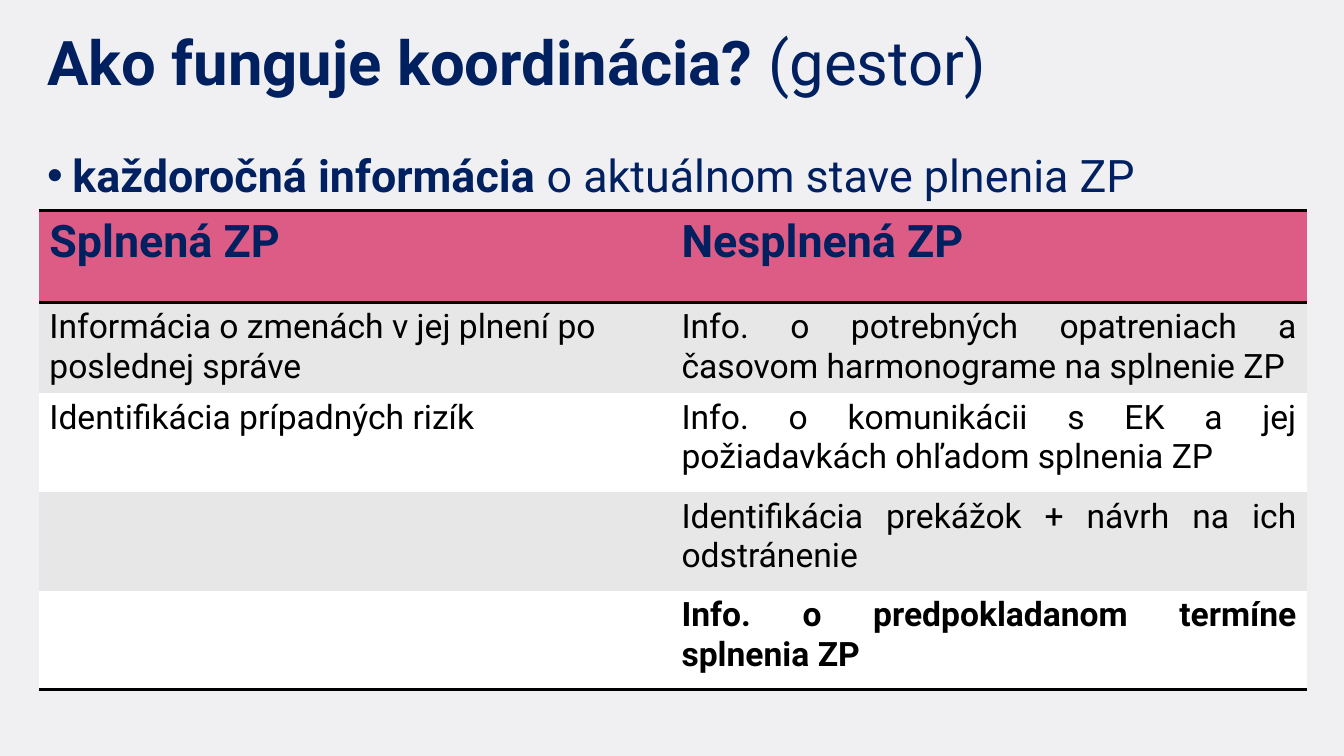
import pptx
import pptx.dml.color
import pptx.enum.text
import pptx.oxml
import pptx.oxml.ns
import pptx.util

WIDE, HIGH = 13.33, 7.5
FONT = "Roboto"
HUES = {"back": "F0F0F3", "navy": "002060", "rose": "DD5C85", "gray": "E7E7E7",
        "white": "FFFFFF", "black": "000000"}
ALIGN = pptx.enum.text.PP_ALIGN
ANCHOR = pptx.enum.text.MSO_ANCHOR
COLS = [6.27, 6.3]
ROWS = [0.91, 0.87, 0.98, 0.98, 0.98]
CELLS = [
    ("Splnená ZP", "Nesplnená ZP"),
    ("Informácia o zmenách v jej plnení po poslednej správe",
     "Info. o potrebných opatreniach a časovom harmonograme na splnenie ZP"),
    ("Identifikácia prípadných rizík",
     "Info. o komunikácii s EK a jej požiadavkách ohľadom splnenia ZP"),
    ("", "Identifikácia prekážok + návrh na ich odstránenie"),
    ("", "Info. o predpokladanom termíne splnenia ZP"),
]


def tint(hue):
    """Return the named colour."""
    return pptx.dml.color.RGBColor.from_string(HUES[hue])


def write(para, text, size, hue, bold=False):
    """Add one run to a paragraph."""
    run = para.add_run()
    run.text = text
    form = {"name": FONT, "size": pptx.util.Pt(size), "bold": bold}
    for key, value in form.items():
        setattr(run.font, key, value)
    run.font.color.rgb = tint(hue)


def label(slide, box, runs, size, hue, anchor=ANCHOR.TOP, **form):
    """Add a text box of (text, bold) runs and return its paragraph."""
    frame = slide.shapes.add_textbox(*map(pptx.util.Inches, box)).text_frame
    frame.word_wrap = True
    frame.vertical_anchor = anchor
    para = frame.paragraphs[0]
    for key, value in form.items():
        setattr(para, key, value)
    for text, bold in runs:
        write(para, text, size, hue, bold)
    return para


def head(slide, box):
    """Place the title."""
    runs = [("Ako funguje koordinácia? ", True), ("(gestor)", False)]
    label(slide, box, runs, 44, "navy", ANCHOR.BOTTOM, line_spacing=0.9)


def point(slide, box):
    """Place the bulleted lead line."""
    runs = [("každoročná informácia ", True), ("o aktuálnom stave plnenia ZP", False)]
    para = label(slide, box, runs, 32, "navy", alignment=ALIGN.JUSTIFY,
                 line_spacing=1.2, space_before=pptx.util.Pt(10))
    props = para._p.get_or_add_pPr()
    dent = pptx.util.Inches(0.25)
    props.set("marL", str(dent))
    props.set("indent", str(-dent))
    space = pptx.oxml.ns.nsdecls("a")
    props.append(pptx.oxml.parse_xml(f'<a:buFont {space} typeface="Arial"/>'))
    props.append(pptx.oxml.parse_xml(f'<a:buChar {space} char="•"/>'))


def rule(cell, sides):
    """Draw black borders on some sides of a cell."""
    props = cell._tc.get_or_add_tcPr()
    space = pptx.oxml.ns.nsdecls("a")
    solid = f'<a:solidFill><a:srgbClr val="{HUES["black"]}"/></a:solidFill>'
    for spot, side in enumerate(sides):
        line = f'<a:ln{side} {space} w="{pptx.util.Pt(2)}">{solid}</a:ln{side}>'
        props.insert(spot, pptx.oxml.parse_xml(line))


def grid(slide, box):
    """Place the table of fulfilled and unfulfilled conditions."""
    sizes = map(pptx.util.Inches, box)
    frame = slide.shapes.add_table(len(ROWS), len(COLS), *sizes)
    table = frame.table
    table._tbl.tblPr[0].text = "{2D5ABB26-0587-4C30-8999-92F81FD0307C}"
    for col, width in zip(table.columns, COLS):
        col.width = pptx.util.Inches(width)
    last = len(ROWS) - 1
    for r, texts in enumerate(CELLS):
        table.rows[r].height = pptx.util.Inches(ROWS[r])
        fill = "rose" if r == 0 else "gray" if r % 2 else "white"
        size, hue = (24, "black") if r else (32, "navy")
        for c, text in enumerate(texts):
            cell = table.cell(r, c)
            cell.fill.solid()
            cell.fill.fore_color.rgb = tint(fill)
            rule(cell, {0: "TB", last: "B"}.get(r, ""))
            para = cell.text_frame.paragraphs[0]
            para.alignment = ALIGN.JUSTIFY if r and c else ALIGN.LEFT
            if text:
                write(para, text, size, hue, r in (0, last))


def main():
    """Build the slide and save it."""
    deck = pptx.Presentation()
    deck.slide_width = pptx.util.Inches(WIDE)
    deck.slide_height = pptx.util.Inches(HIGH)
    slide = deck.slides.add_slide(deck.slide_layouts[6])
    slide.background.fill.solid()
    slide.background.fill.fore_color.rgb = tint("back")
    head(slide, (0.37, 0.07, 10.89, 0.96))
    point(slide, (0.37, 1.31, 12.57, 0.78))
    grid(slide, (0.39, 2.09, sum(COLS), sum(ROWS)))
    deck.save("out.pptx")


if __name__ == "__main__":
    main()
